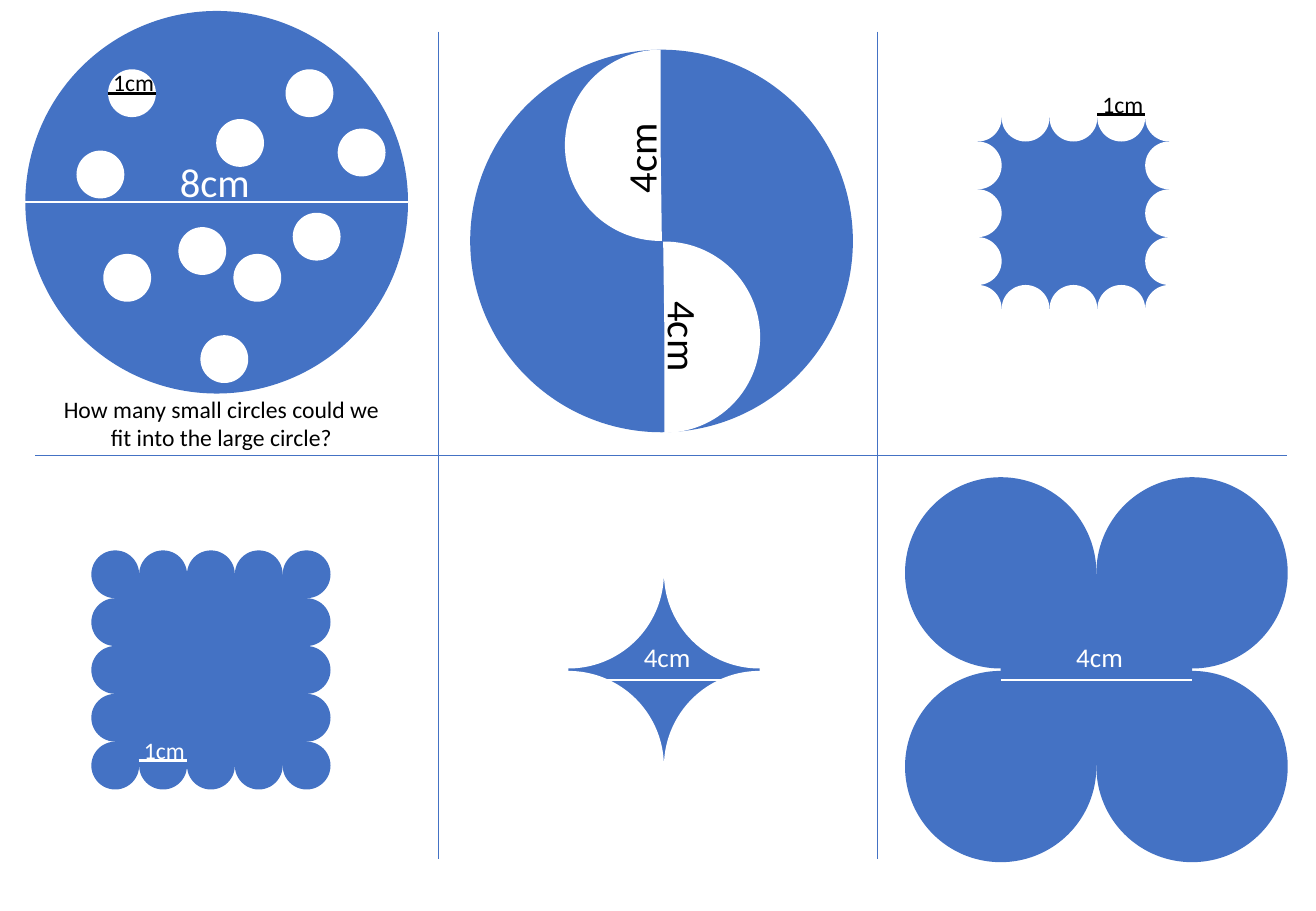
"""Build a slide of six circle and area puzzles."""
import itertools

import lxml.etree
import pptx
import pptx.dml.color
import pptx.enum.shapes
import pptx.enum.text
import pptx.oxml.ns
import pptx.util

Cm = pptx.util.Cm
KIND = pptx.enum.shapes.MSO_SHAPE
BLUE = pptx.dml.color.RGBColor(0x44, 0x72, 0xC4)
WHITE = pptx.dml.color.RGBColor(0xFF, 0xFF, 0xFF)
BLACK = pptx.dml.color.RGBColor(0x00, 0x00, 0x00)
DOTS = [
    (2.26, 1.45), (4.52, 2.49), (3.73, 4.75), (6.12, 4.45), (5.97, 1.45),
    (2.16, 5.31), (1.6, 3.15), (4.88, 5.31), (4.19, 7.01), (7.06, 2.69),
]


def add_form(slide, kind, x, y, size, fill):
    """Add a plain shape as wide as it is high."""
    form = slide.shapes.add_shape(kind, Cm(x), Cm(y), Cm(size), Cm(size))
    form.shadow.inherit = False
    form.fill.solid()
    form.fill.fore_color.rgb = fill
    form.line.fill.background()
    return form


def add_half(slide, x, y, turn):
    """Add a white half disc 4 cm across."""
    half = add_form(slide, KIND.PIE, x, y, 4, WHITE)
    half.adjustments[0] = 53.53
    half.adjustments[1] = 162
    half.rotation = turn


def add_line(slide, x1, y1, x2, y2, color, width=1.5):
    """Add a straight line with no shadow."""
    line = slide.shapes.add_connector(
        pptx.enum.shapes.MSO_CONNECTOR.STRAIGHT, Cm(x1), Cm(y1), Cm(x2), Cm(y2))
    line.line.color.rgb = color
    line.line.width = pptx.util.Pt(width)
    lxml.etree.SubElement(line._element.spPr, pptx.oxml.ns.qn("a:effectLst"))


def add_text(slide, text, x, y, wide, high, size=14, color=BLACK, turn=0):
    """Add a centred text box with one paragraph per line."""
    box = slide.shapes.add_textbox(Cm(x), Cm(y), Cm(wide), Cm(high))
    box.rotation = turn
    frame = box.text_frame
    frame.word_wrap = True
    frame.auto_size = pptx.enum.text.MSO_AUTO_SIZE.SHAPE_TO_FIT_TEXT
    frame.text = text
    for para in frame.paragraphs:
        para.alignment = pptx.enum.text.PP_ALIGN.CENTER
        para.font.name = "Calibri"
        para.font.size = pptx.util.Pt(size)
        para.font.color.rgb = color


def add_ring(slide, x, y, count, size, fill, step):
    """Add a blue 4 cm square with circles centred along its edge."""
    add_form(slide, KIND.RECTANGLE, x + size / 2, y + step / 2, 4, BLUE)
    ends = (0, count - 1)
    for row, col in itertools.product(range(count), repeat=2):
        if row in ends or col in ends:
            add_form(slide, KIND.OVAL, x + col * size, y + row * step, size, fill)


def add_grid(slide):
    """Add the lines between the six puzzles."""
    add_line(slide, 0.74, 9.53, 26.9, 9.53, BLUE, 0.5)
    for x in (9.17, 18.34):
        add_line(slide, x, 0.66, x, 17.96, BLUE, 0.5)


def add_disc(slide):
    """Add the large circle with its small circles and question."""
    add_form(slide, KIND.OVAL, 0.53, 0.23, 8, BLUE)
    for x, y in DOTS:
        add_form(slide, KIND.OVAL, x, y, 1, WHITE)
    add_text(slide, "8cm", 0.53, 3.15, 7.92, 1.27, size=24, color=WHITE)
    add_line(slide, 0.53, 4.22, 8.53, 4.22, WHITE)
    add_text(slide, "1cm", 1.32, 1.3, 2.95, 0.86)
    add_line(slide, 2.26, 1.96, 3.26, 1.96, BLACK)
    add_text(slide, "How many small circles could we\nfit into the large circle?",
             0.2, 8.13, 8.86, 1.45)


def add_swirl(slide):
    """Add the circle with two half discs cut out."""
    add_form(slide, KIND.OVAL, 9.83, 1.04, 8, BLUE)
    add_half(slide, 11.81, 1.04, 0)
    add_half(slide, 11.89, 5.05, 180)
    add_text(slide, "4cm", 12.07, 2.67, 2.64, 1.27, size=24, turn=270)
    add_text(slide, "4cm", 12.98, 6.4, 2.64, 1.27, size=24, turn=90)


def add_edge(slide, x, y, fill):
    """Add a square edged with 1 cm circles."""
    add_ring(slide, x, y, 5, 1, fill, 1)


def add_quad(slide, x, y, fill):
    """Add a square with a 4 cm circle at each corner and its width."""
    add_ring(slide, x, y, 2, 4, fill, 4.05)
    add_text(slide, "4cm", x + 2.59, y + 3.3, 2.95, 0.94, size=16, color=WHITE)
    add_line(slide, x + 2, y + 4.24, x + 6, y + 4.24, WHITE)


def main():
    """Build and save the slide."""
    deck = pptx.Presentation()
    deck.slide_width, deck.slide_height = Cm(27.51), Cm(19.05)
    slide = deck.slides.add_slide(deck.slide_layouts[6])
    add_grid(slide)
    add_disc(slide)
    add_swirl(slide)
    add_edge(slide, 19.94, 1.96, WHITE)
    add_text(slide, "1cm", 22, 1.75, 2.95, 0.86)
    add_line(slide, 22.94, 2.39, 23.94, 2.39, BLACK)
    add_quad(slide, 9.88, 9.98, WHITE)
    add_quad(slide, 18.92, 9.98, BLUE)
    add_edge(slide, 1.91, 11.51, BLUE)
    add_text(slide, "1cm", 1.96, 15.27, 2.95, 0.86, color=WHITE)
    add_line(slide, 2.9, 15.9, 3.9, 15.9, WHITE)
    deck.save("out.pptx")


if __name__ == "__main__":
    main()
